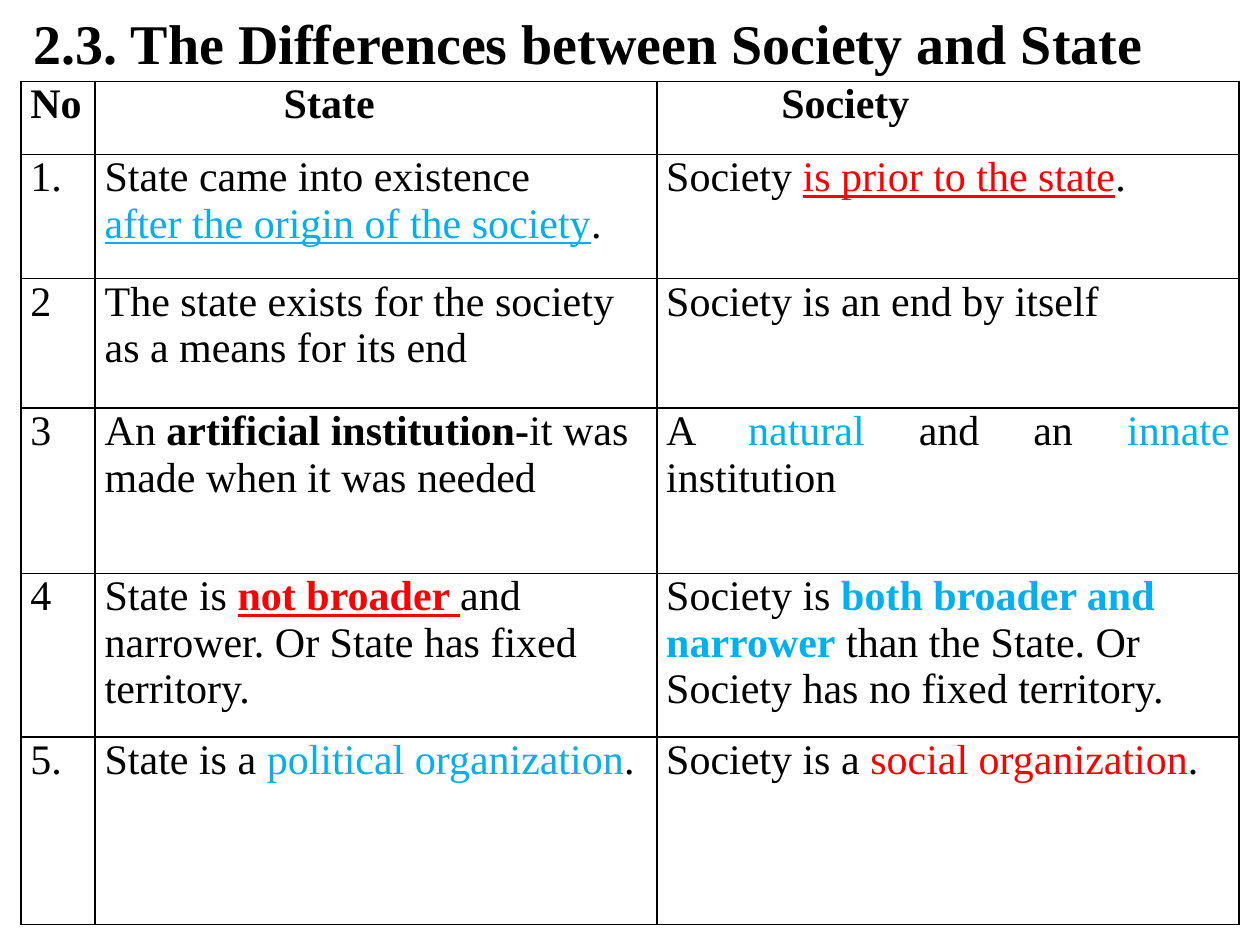
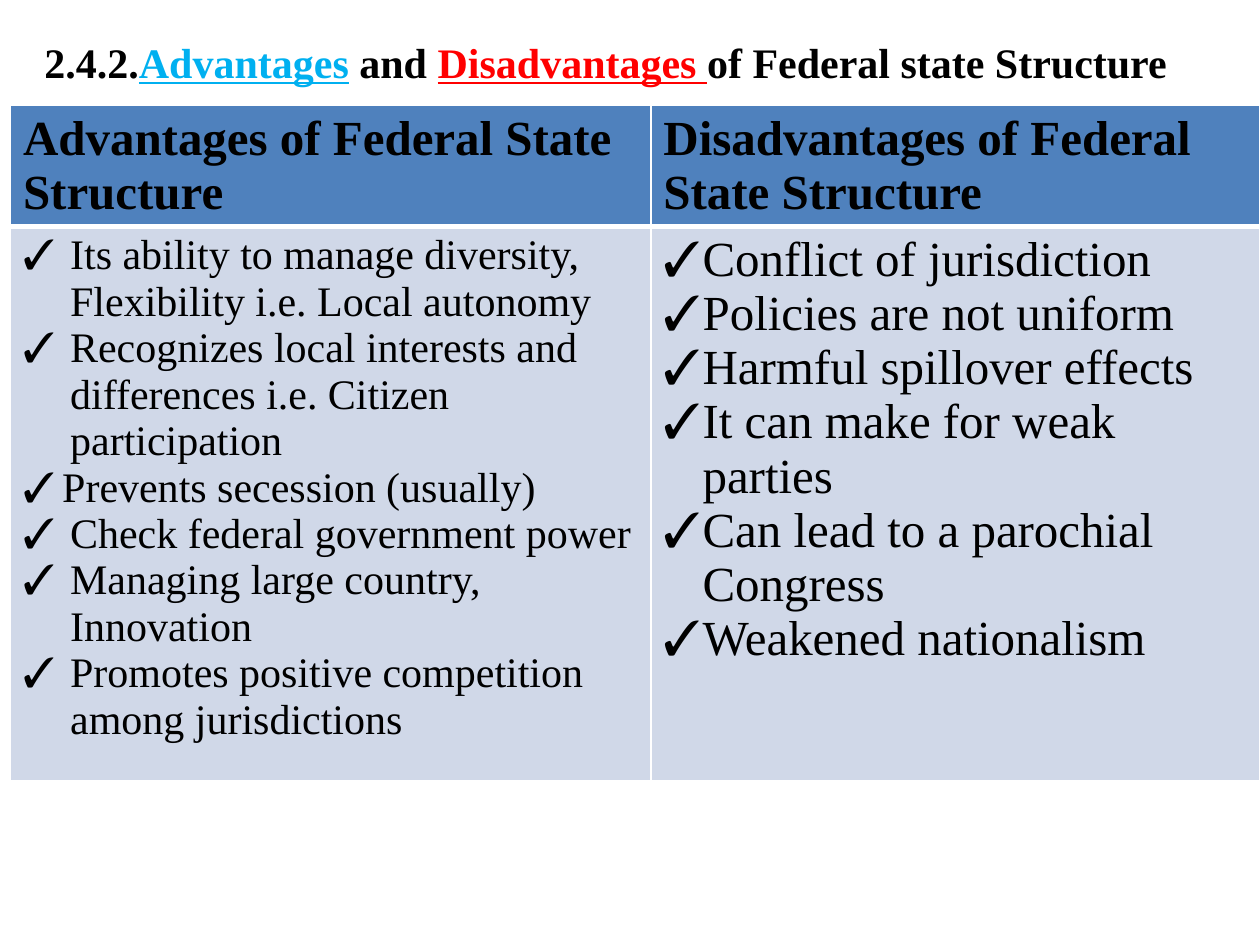
from dataclasses import dataclass

from lxml import etree
from pptx import Presentation
from pptx.dml.color import RGBColor
from pptx.enum.text import MSO_ANCHOR, MSO_AUTO_SIZE, PP_ALIGN
from pptx.oxml.ns import qn
from pptx.util import Cm, Pt

LEFT, JUSTIFY = PP_ALIGN.LEFT, PP_ALIGN.JUSTIFY
TOP = MSO_ANCHOR.TOP
NO_AUTOFIT = MSO_AUTO_SIZE.NONE
TITLE_ONLY = 5


@dataclass(frozen=True)
class Theme:
    font: str = "Times New Roman"
    black: str = "000000"
    white: str = "FFFFFF"
    blue: str = "00B0F0"
    red: str = "FF0000"
    header: str = "4F81BD"
    body: str = "D0D8E8"
    title: int = 32
    large: int = 28
    normal: int = 24
    thin: float = 1
    thick: float = 3


T = Theme()


@dataclass(frozen=True)
class Span:
    """A piece of text that differs from the text around it."""
    text: str
    color: str = T.black
    bold: bool = False
    underline: bool = False


def write(p, spans, size, bold=False):
    """Fill a paragraph from one string or a list of strings and Spans."""
    for item in [spans] if isinstance(spans, (str, Span)) else spans:
        span = item if isinstance(item, Span) else Span(item)
        r = p.add_run()
        r.text = span.text
        r.font.name = T.font
        r.font.size = Pt(size)
        r.font.bold = bold or span.bold
        r.font.underline = span.underline
        r.font.color.rgb = RGBColor.from_string(span.color)


def indent(p, left, first=0.0):
    pPr = p._p.get_or_add_pPr()
    pPr.set("marL", str(Cm(left)))
    pPr.set("indent", str(Cm(first)))
    return pPr


def add_title(s, left, top, height, spans, size):
    title = s.shapes.title
    title.left, title.top = Cm(left), Cm(top)
    title.width, title.height = Cm(24.4), Cm(height)
    tf = title.text_frame
    tf.auto_size = NO_AUTOFIT
    tf.vertical_anchor = TOP
    p = tf.paragraphs[0]
    p.alignment = LEFT
    write(p, spans, size, bold=True)


def add_table(s, left, top, widths, heights):
    frame = s.shapes.add_table(len(heights), len(widths), Cm(left), Cm(top),
                               Cm(sum(widths)), Cm(sum(heights)))
    table = frame.table
    table.first_row = table.horz_banding = False
    for column, width in zip(table.columns, widths):
        column.width = Cm(width)
    for row, height in zip(table.rows, heights):
        row.height = Cm(height)
    return table


def style_cell(cell, line, fill=None, top=T.thin, bottom=T.thin):
    """Draw the four borders first, since the fill must follow them."""
    tcPr = cell._tc.get_or_add_tcPr()
    sides = {"lnL": T.thin, "lnR": T.thin, "lnT": top, "lnB": bottom}
    for side, width in sides.items():
        ln = etree.SubElement(tcPr, qn(f"a:{side}"), w=str(Pt(width)))
        solid = etree.SubElement(ln, qn("a:solidFill"))
        etree.SubElement(solid, qn("a:srgbClr"), val=line)
    if fill:
        cell.fill.solid()
        cell.fill.fore_color.rgb = RGBColor.from_string(fill)
    else:
        cell.fill.background()


def cell_paragraphs(cell, count):
    tf = cell.text_frame
    return [tf.paragraphs[0]] + [tf.add_paragraph() for _ in range(count - 1)]


def add_checklist(cell, items, size, indents):
    for p, item, left in zip(cell_paragraphs(cell, len(items)), items, indents):
        pPr = indent(p, left, -left)
        etree.SubElement(pPr, qn("a:buFont"), typeface=T.font)
        etree.SubElement(pPr, qn("a:buChar"), char="✓")
        write(p, item, size)


def add_comparison_table(s, rows):
    """Each cell holds a list of paragraphs; the first row is the heading."""
    table = add_table(s, 0.42, 1.64, [1.5, 11.32, 11.74],
                      [1.47, 2.51, 2.61, 3.33, 3.3, 3.78])
    for i, row in enumerate(rows):
        for j, paragraphs in enumerate(row):
            cell = table.cell(i, j)
            style_cell(cell, T.black)
            cell.margin_left = cell.margin_right = Cm(0.19)
            cell.margin_top = cell.margin_bottom = 0
            for p, spans in zip(cell_paragraphs(cell, len(paragraphs)), paragraphs):
                write(p, spans, T.normal, bold=i == 0)
    for j, left in ((1, 3.61), (2, 2.32)):
        indent(table.cell(0, j).text_frame.paragraphs[0], left)
    for i in (2, 3):
        table.cell(i, 2).text_frame.paragraphs[0].alignment = JUSTIFY


def add_pros_cons_table(s, columns):
    """Each column is (heading, items, text size, item indents)."""
    table = add_table(s, 0.21, 2.12, [12.91, 12.27], [2.41, 11.18])
    for j, (heading, items, size, indents) in enumerate(columns):
        head, body = table.cell(0, j), table.cell(1, j)
        style_cell(head, T.white, T.header, bottom=T.thick)
        style_cell(body, T.white, T.body, top=T.thick)
        write(head.text_frame.paragraphs[0], heading, T.large, bold=True)
        add_checklist(body, items, size, indents)


def build_society_and_state(s):
    add_title(s, 0.43, 0.05, 1.5,
              "2.3. The Differences between Society and State", T.title)
    add_comparison_table(s, [
        (["No"], ["State"], ["Society"]),
        (["1."],
         ["State came into existence",
          [Span("after the origin of the society", T.blue, underline=True), "."]],
         [["Society ", Span("is prior to the state", T.red, underline=True), "."]]),
        (["2"],
         ["The state exists for the society as a means for its end"],
         ["Society is an end by itself"]),
        (["3"],
         [["An ", Span("artificial institution-", bold=True),
           "it was made when it was needed"]],
         [["A ", Span("natural", T.blue), " and an ", Span("innate", T.blue),
           " institution"]]),
        (["4"],
         [["State is ", Span("not broader ", T.red, True, True),
           "and narrower. Or State has fixed territory."]],
         [["Society is ", Span("both broader and narrower", T.blue, True),
           " than the State. Or Society has no fixed territory."]]),
        (["5."],
         [["State is a ", Span("political organization", T.blue), "."]],
         [["Society is a ", Span("social organization", T.red), "."]]),
    ])


def build_federal_structure(s):
    add_title(s, 0.64, 0.61, 1.3, [
        "2.4.2.", Span("Advantages", T.blue, underline=True), " and ",
        Span("Disadvantages ", T.red, underline=True),
        "of Federal state Structure"], T.normal)
    wide, narrow = 0.95, 0.79
    add_pros_cons_table(s, [
        ("Advantages of Federal State Structure",
         ["Its ability to manage diversity, Flexibility i.e. Local autonomy",
          "Recognizes local interests and differences i.e. Citizen participation",
          "Prevents secession (usually)",
          "Check federal government power",
          "Managing large country, Innovation",
          "Promotes positive competition among jurisdictions"],
         T.normal, [wide, wide, narrow, wide, wide, wide]),
        ("Disadvantages of Federal State Structure",
         ["Conflict of jurisdiction",
          "Policies are not uniform",
          "Harmful spillover effects",
          "It can make for weak parties",
          "Can lead to a parochial Congress",
          "Weakened nationalism"],
         T.large, [narrow] * 6),
    ])


def main():
    prs = Presentation()
    prs.slide_width, prs.slide_height = Cm(25.4), Cm(19.05)
    for build in (build_society_and_state, build_federal_structure):
        build(prs.slides.add_slide(prs.slide_layouts[TITLE_ONLY]))
    prs.save("out.pptx")


if __name__ == "__main__":
    main()
